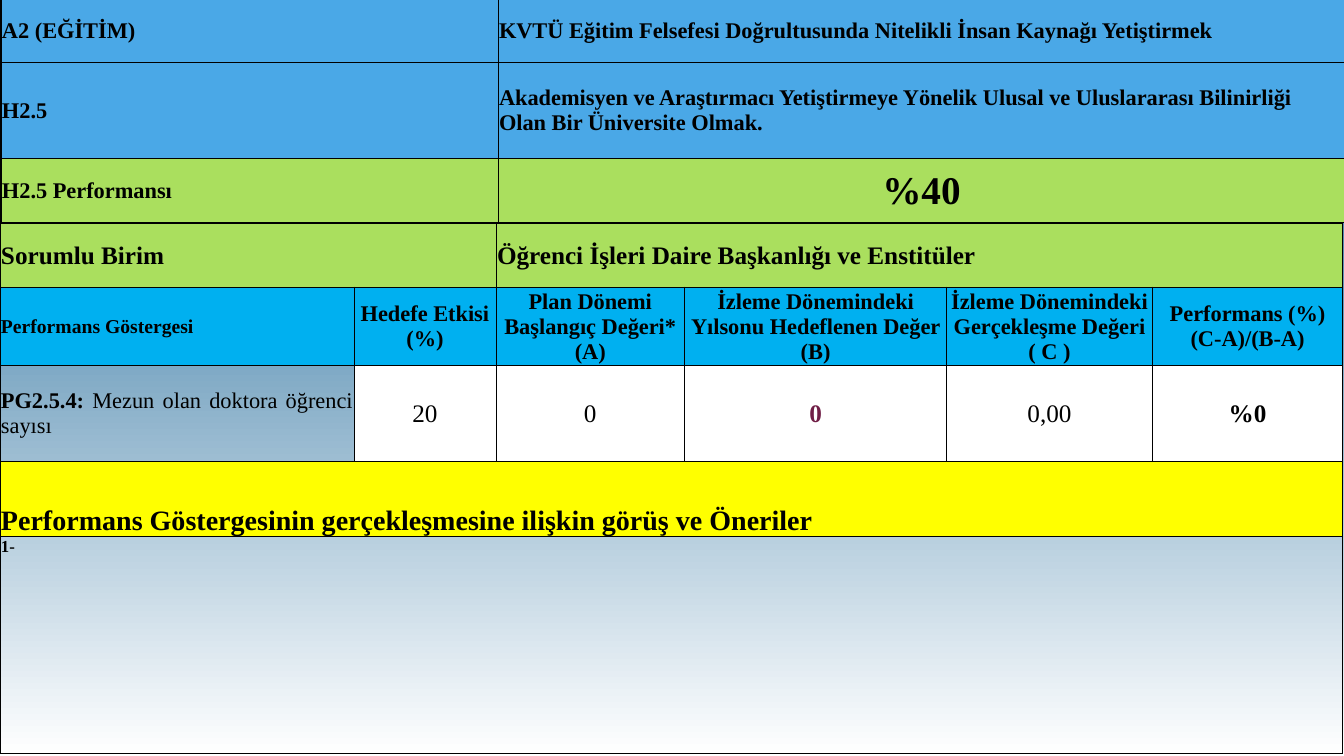
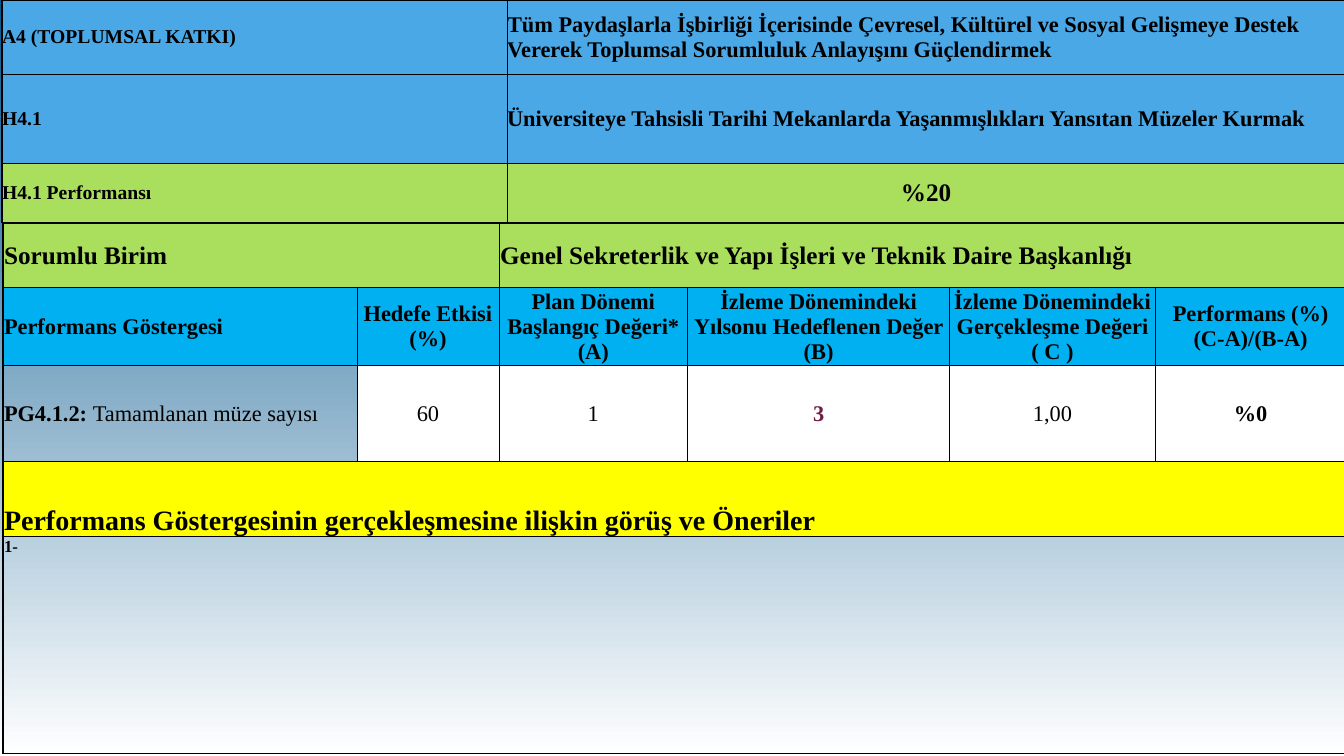
from dataclasses import dataclass

from lxml.etree import SubElement as Sub
from pptx import Presentation as Deck
from pptx.dml.color import RGBColor as Rgb
from pptx.enum.text import MSO_ANCHOR as Anchor, PP_ALIGN as Align
from pptx.oxml.ns import qn
from pptx.util import Inches, Pt


@dataclass(frozen=True)
class Theme:
    font: str = "Times New Roman"
    ink: str = "000000"
    blue: str = "4AA8E7"
    green: str = "AADF5E"
    sky: str = "00B0F0"
    white: str = "FFFFFF"
    yellow: str = "FFFF00"
    plum: str = "701E46"
    deep: str = "06588E"
    tiny: int = 12
    small: int = 14
    body: int = 16
    large: int = 18
    head: int = 20
    huge: int = 28
    thin: float = 0.5
    thick: float = 1


T = Theme()
WIDE, HIGH = 13.33, 7.5
SPLIT = 2.22
HEADS = (
    "Hedefe Etkisi (%)",
    "Plan Dönemi Başlangıç Değeri* (A)",
    "İzleme Dönemindeki Yılsonu Hedeflenen Değer (B)",
    "İzleme Dönemindeki Gerçekleşme Değeri ( C )",
    "Performans (%) (C-A)/(B-A)",
)
NOTE = "Performans Göstergesinin gerçekleşmesine ilişkin görüş ve Öneriler"


def write(cell, text, size=T.body, bold=True, color=T.ink, align=Align.LEFT,
          anchor=Anchor.MIDDLE, pad=0.01, lead=""):
    cell.vertical_anchor = anchor
    cell.margin_left = cell.margin_right = cell.margin_top = Inches(pad)
    cell.margin_bottom = 0
    para = cell.text_frame.paragraphs[0]
    para.alignment = align
    for part, heavy in ((lead, True), (text, bold)):
        if part:
            run = para.add_run()
            run.text = part
            font = run.font
            font.name, font.size, font.bold = T.font, Pt(size), heavy
            font.color.rgb = Rgb.from_string(color)


def rule(cell, sides):
    props = cell._tc.get_or_add_tcPr()
    for side, width in zip("LRTB", sides):
        line = Sub(props, qn(f"a:ln{side}"), w=str(Pt(width)))
        fill = Sub(line, qn("a:solidFill"))
        Sub(fill, qn("a:srgbClr"), val=T.ink)


def paint(cell, color):
    if color:
        cell.fill.solid()
        cell.fill.fore_color.rgb = Rgb.from_string(color)
    else:
        cell.fill.background()


def item(text, fill=None, span=1, **form):
    return text, fill, span, form


def grid(slide, box, cols, highs, rows, bold_tops):
    frame = slide.shapes.add_table(len(rows), len(cols), *map(Inches, box))
    table = frame.table
    table.first_row = table.horz_banding = False
    for col, width in zip(table.columns, cols):
        col.width = Inches(width)
    for row, high in zip(table.rows, highs):
        row.height = Inches(high)
    for r, items in enumerate(rows):
        top, base = (T.thick if n in bold_tops else T.thin for n in (r, r + 1))
        c = 0
        for text, fill, span, form in items:
            last = c + span
            left = T.thin if c else T.thick
            right = T.thick if last == len(cols) else T.thin
            for n in range(c, last):
                cell = table.cell(r, n)
                rule(cell, (left, right, top, base))
                paint(cell, fill)
            if span > 1:
                table.cell(r, c).merge(table.cell(r, last - 1))
            write(table.cell(r, c), text, **form)
            c = last


def goals(slide, box, cols, highs, pairs, size, big, pad):
    rows = []
    for n, (label, text) in enumerate(pairs):
        score = n == len(pairs) - 1
        fill = T.green if score else T.blue
        rows.append((
            item(label, fill, 2, size=size, pad=pad),
            item(text, fill, size=big if score else T.body, pad=pad,
                 align=Align.CENTER if score else Align.LEFT),
        ))
    grid(slide, box, cols, highs, rows, {0})


def report(slide, box, unit, code, name, values, label, size):
    mid = Align.CENTER
    forms = ({}, {}, {"bold": True, "color": T.plum}, {}, {"bold": True})
    rows = (
        (item("Sorumlu Birim", T.green, 2, size=T.large),
         item(unit, T.green, 4, size=T.large)),
        (item("Performans Göstergesi", T.sky, size=label, align=Align.JUSTIFY),
         *(item(head, T.sky, align=mid) for head in HEADS)),
        (item(name, lead=f"{code}: ", bold=False, size=label if label > T.body else T.body,
              align=Align.JUSTIFY),
         *(item(value, T.white, align=mid, **{"size": size, "bold": False, **form})
           for value, form in zip(values, forms))),
        (item(NOTE, T.yellow, 6, size=T.head, anchor=Anchor.BOTTOM),),
        (item("1-", None, 6, size=T.tiny, anchor=Anchor.TOP),),
    )
    grid(slide, box, (3.51, 1.41, 1.87, 2.6, 2.04, 1.89),
         (0.63, 0.77, 0.96, 0.74, 2.15), rows, {1, 3})


def page(deck):
    slide = deck.slides.add_slide(deck.slide_layouts[6])
    fill = slide.background.fill
    fill.gradient()
    fill.gradient_angle = 90
    for stop, place, color in zip(fill.gradient_stops, (0, 1), (T.white, T.deep)):
        stop.position = place
        stop.color.rgb = Rgb.from_string(color)
    return slide


def main():
    deck = Deck()
    deck.slide_width, deck.slide_height = Inches(WIDE), Inches(HIGH)

    slide = page(deck)
    goals(slide, (0.01, -0.01, WIDE, SPLIT), (3.62, 1.31, 8.4), (0.63, 0.95, 0.64), (
        ("A2 (EĞİTİM)",
         "KVTÜ Eğitim Felsefesi Doğrultusunda Nitelikli İnsan Kaynağı Yetiştirmek"),
        ("H2.5", "Akademisyen ve Araştırmacı Yetiştirmeye Yönelik Ulusal ve "
                 "Uluslararası Bilinirliği Olan Bir Üniversite Olmak."),
        ("H2.5 Performansı", "%40"),
    ), size=T.body, big=T.huge, pad=0.01)
    report(slide, (0, SPLIT, WIDE, HIGH - SPLIT),
           "Öğrenci İşleri Daire Başkanlığı ve Enstitüler",
           "PG2.5.4", "Mezun olan doktora öğrenci sayısı",
           ("20", "0", "0", "0,00", "%0"), label=T.small, size=T.large)

    slide = page(deck)
    goals(slide, (0.02, 0, WIDE, SPLIT), (3.62, 1.39, 8.31), (0.74, 0.88, 0.59), (
        ("A4 (TOPLUMSAL KATKI)",
         "Tüm Paydaşlarla İşbirliği İçerisinde Çevresel, Kültürel ve Sosyal Gelişmeye "
         "Destek Vererek Toplumsal Sorumluluk Anlayışını Güçlendirmek"),
        ("H4.1", "Üniversiteye Tahsisli Tarihi Mekanlarda Yaşanmışlıkları Yansıtan "
                 "Müzeler Kurmak"),
        ("H4.1 Performansı", "%20"),
    ), size=T.small, big=T.large, pad=0)
    report(slide, (0.03, SPLIT, WIDE, HIGH - SPLIT),
           "Genel Sekreterlik ve Yapı İşleri ve Teknik Daire Başkanlığı",
           "PG4.1.2", "Tamamlanan müze sayısı",
           ("60", "1", "3", "1,00", "%0"), label=T.body, size=T.body)

    deck.save("out.pptx")


if __name__ == "__main__":
    main()
